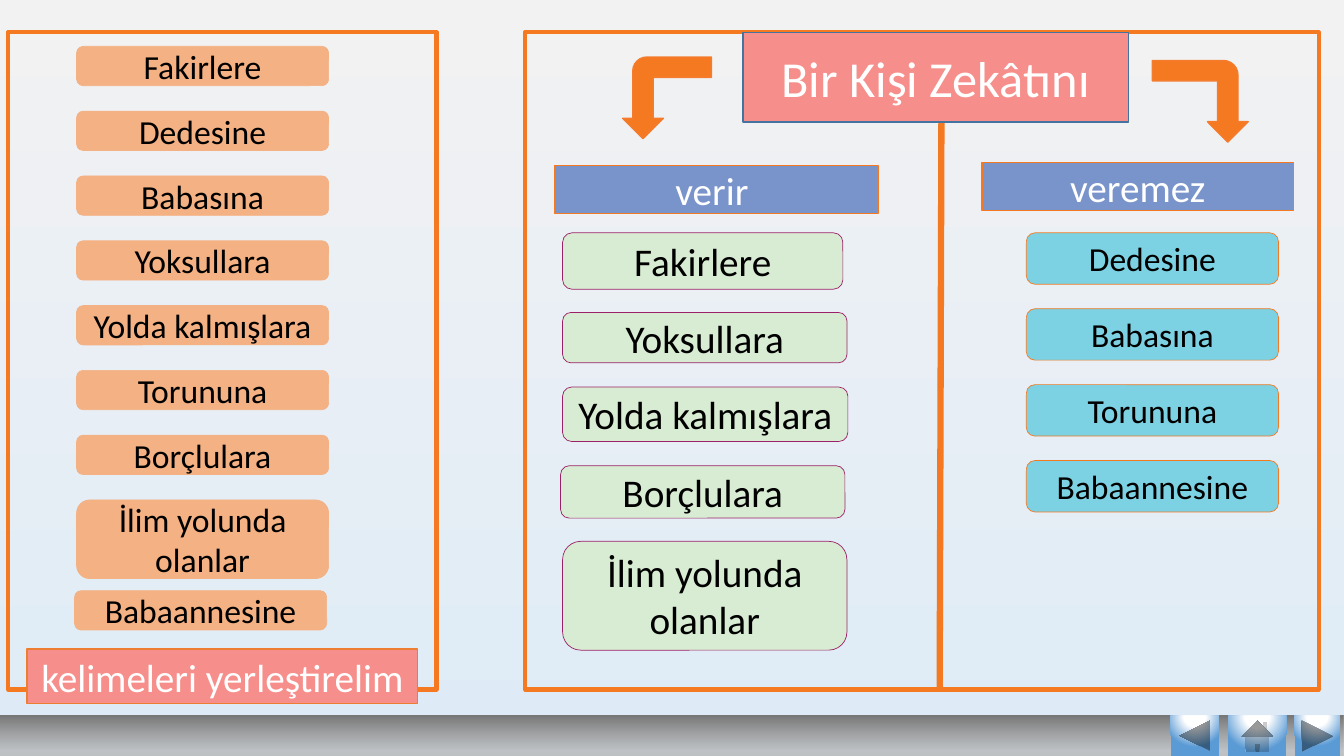
from lxml import etree
from pptx import Presentation
from pptx import util as u
from pptx.dml.color import RGBColor
from pptx.enum import shapes, text
from pptx.oxml.ns import qn

KIND = shapes.MSO_SHAPE
HUES = {
    "orange": "F57921", "edge": "F47C2E", "rust": "ED7D31", "peach": "F4B183",
    "blue": "7993CB", "navy": "43739E", "aqua": "7CD2E3", "mint": "D8ECD3",
    "plum": "9C2068", "pink": "F68F8B", "white": "FFFFFF", "black": "000000",
    "fog": "F2F2F2", "sky": "DEEBF7", "silver": "C0C0C0", "ash": "B3B3B3",
    "gray": "777777", "azure": "5B9BD5",
}


def rgb(hue):
    return RGBColor.from_string(HUES[hue])


class Board:
    font = "Calibri"

    def __init__(self, deck):
        self.slide = deck.slides.add_slide(deck.slide_layouts[6])

    def blend(self, fill, owner, stops, angle=None):
        fill.gradient()
        grad = owner.find(".//" + qn("a:gradFill"))
        for child in list(grad):
            grad.remove(child)
        group = etree.SubElement(grad, qn("a:gsLst"))
        for place, hue, alpha in stops:
            stop = etree.SubElement(group, qn("a:gs"), pos=str(place * 1000))
            tint = etree.SubElement(stop, qn("a:srgbClr"), val=HUES[hue])
            if alpha < 100:
                etree.SubElement(tint, qn("a:alpha"), val=str(alpha * 1000))
        if angle is None:
            glow = etree.SubElement(grad, qn("a:path"), path="circle")
            etree.SubElement(glow, qn("a:fillToRect"), l="50000", t="-80000",
                             r="50000", b="180000")
        else:
            etree.SubElement(grad, qn("a:lin"), ang=str(angle * 60000), scaled="0")

    def backdrop(self, stops, angle):
        self.blend(self.slide.background.fill, self.slide.element, stops, angle)

    def shape(self, kind, area, fill=None, line=None, width=1):
        item = self.slide.shapes.add_shape(kind, *map(u.Inches, area))
        item.shadow.inherit = False
        if fill:
            item.fill.solid()
            item.fill.fore_color.rgb = rgb(fill)
        else:
            item.fill.background()
        if line:
            item.line.color.rgb = rgb(line)
            item.line.width = u.Pt(width)
        else:
            item.line.fill.background()
        return item

    def label(self, words, area, fill, line, size, hue="white", kind=KIND.RECTANGLE, width=1):
        frame = self.shape(kind, area, fill, line, width).text_frame
        frame.word_wrap = True
        frame.vertical_anchor = text.MSO_ANCHOR.MIDDLE
        para = frame.paragraphs[0]
        para.alignment = text.PP_ALIGN.CENTER
        run = para.add_run()
        run.text = words
        for name, value in {"name": self.font, "size": u.Pt(size)}.items():
            setattr(run.font, name, value)
        run.font.color.rgb = rgb(hue)

    def chip(self, words, area, fill, line, size):
        self.label(words, area, fill, line, size, "black", KIND.ROUNDED_RECTANGLE, 0.5)

    def panel(self, area):
        self.shape(KIND.RECTANGLE, area, line="orange", width=3)

    def rule(self, start, end, hue, width):
        item = self.slide.shapes.add_connector(
            shapes.MSO_CONNECTOR.STRAIGHT, *map(u.Inches, start + end))
        item.line.color.rgb = rgb(hue)
        item.line.width = u.Pt(width)
        etree.SubElement(item.element.spPr, qn("a:effectLst"))

    def arrow(self, area, bend, flip=False):
        item = self.shape(KIND.BENT_ARROW, area, "orange", "edge")
        item.rotation = 90
        for spot, value in enumerate((0.25, 0.25, 0.25, bend)):
            item.adjustments[spot] = value
        if flip:
            item.element.spPr.find(qn("a:xfrm")).set("flipV", "1")

    def shade(self, kind, area, stops, angle=None):
        item = self.shape(kind, area)
        self.blend(item.fill, item.element, stops, angle)


def main():
    deck = Presentation()
    deck.slide_width, deck.slide_height = u.Inches(13.33), u.Inches(7.5)
    board = Board(deck)
    board.backdrop([(0, "fog", 100), (100, "sky", 100)], 90)

    board.label("verir ", (5.5, 1.64, 3.21, 0.48), "blue", "orange", 28)
    board.rule((9.34, 0.32), (9.32, 6.84), "orange", 4.5)
    board.label("veremez", (9.74, 1.61, 3.09, 0.48), "blue", "orange", 28)
    board.panel((5.21, 0.32, 7.87, 6.52))

    barred = ("Dedesine", "Babasına", "Torununa", "Babaannesine")
    for row, word in enumerate(barred):
        board.chip(word, (10.18, 2.31 + row * 0.753, 2.5, 0.51), "aqua", "orange", 24)

    allowed = (
        ("Fakirlere", 5.58, 2.31, 2.78, 0.56),
        ("Yoksullara", 5.58, 3.1, 2.82, 0.5),
        ("Yolda kalmışlara", 5.58, 3.84, 2.83, 0.54),
        ("Borçlulara", 5.56, 4.62, 2.82, 0.52),
        ("İlim yolunda olanlar", 5.58, 5.37, 2.82, 1.08),
    )
    for word, *area in allowed:
        board.chip(word, area, "mint", "plum", 28)

    board.panel((0.08, 0.32, 4.25, 6.52))
    bank = ("Fakirlere", "Dedesine", "Babasına", "Yoksullara", "Yolda kalmışlara",
            "Torununa", "Borçlulara")
    step = 4.5 / len(bank)
    spots = [(word, 0.76, 0.46 + row * step, 2.5, 0.39) for row, word in enumerate(bank)]
    spots += [("İlim yolunda olanlar", 0.76, 4.96, 2.5, 0.78),
              ("Babaannesine", 0.74, 5.86, 2.5, 0.39)]
    for word, *area in spots:
        board.chip(word, area, "peach", "peach", 24)

    board.label("Bir Kişi Zekâtını", (7.37, 0.32, 3.82, 0.89), "pink", "navy", 36)
    board.arrow((11.5, 0.53, 0.81, 0.95), 0.18)
    board.arrow((6.21, 0.53, 0.81, 0.88), 0.17, flip=True)

    board.shade(KIND.RECTANGLE, (0, 7.1, 13.33, 0.42),
                [(0, "silver", 100), (17, "ash", 70), (100, "gray", 100)], 270)
    glow = [(0, "white", 100), (35, "white", 100), (100, "azure", 100)]
    keys = (
        (KIND.ACTION_BUTTON_BACK_OR_PREVIOUS, 11.61, 0.48, 0.4),
        (KIND.ACTION_BUTTON_FORWARD_OR_NEXT, 12.84, 0.45, 0.41),
        (KIND.ACTION_BUTTON_HOME, 12.18, 0.58, 0.41),
    )
    for kind, left, wide, high in keys:
        board.shade(kind, (left, 7.1, wide, high), glow)

    board.label("kelimeleri yerleştirelim ", (0.27, 6.44, 3.87, 0.54), "pink", "rust", 28)
    deck.save("out.pptx")


if __name__ == "__main__":
    main()
